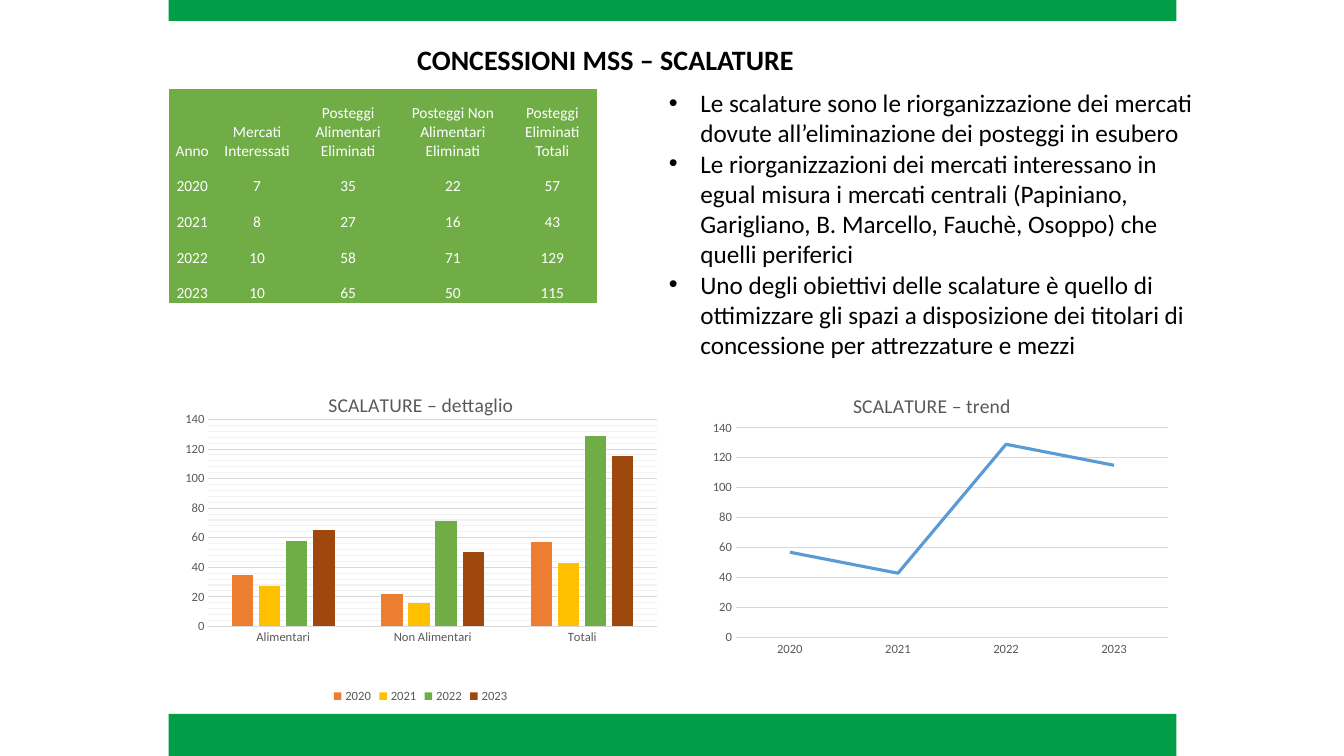
from dataclasses import dataclass

from lxml.etree import SubElement
from pptx import Presentation
from pptx.chart.data import CategoryChartData
from pptx.dml.color import RGBColor
from pptx.enum.chart import XL_CHART_TYPE, XL_LEGEND_POSITION, XL_TICK_MARK
from pptx.enum.shapes import MSO_SHAPE
from pptx.enum.text import MSO_ANCHOR, MSO_AUTO_SIZE, PP_ALIGN
from pptx.oxml import parse_xml
from pptx.oxml.ns import nsdecls, qn
from pptx.util import Cm, Pt


@dataclass(frozen=True)
class Theme:
    font: str = "Calibri"
    black: RGBColor = RGBColor.from_string("000000")
    white: RGBColor = RGBColor.from_string("FFFFFF")
    band: RGBColor = RGBColor.from_string("009E47")
    cell: RGBColor = RGBColor.from_string("70AD47")
    gray: RGBColor = RGBColor.from_string("595959")
    grid: RGBColor = RGBColor.from_string("D9D9D9")
    minor_grid: RGBColor = RGBColor.from_string("F2F2F2")
    years: tuple = ("ED7D31", "FFC000", "70AD47", "9E480E")
    trend: tuple = ("5B9BD5",)
    title: Pt = Pt(20)
    body: Pt = Pt(18)
    chart_title: Pt = Pt(14)
    table: Pt = Pt(11)
    label: Pt = Pt(9)


theme = Theme()


def write(tf, text, size, color, bold=False, align=PP_ALIGN.LEFT, spacing=None, bullet=None):
    for i, line in enumerate(text.split("\n")):
        p = tf.add_paragraph() if i else tf.paragraphs[0]
        p.alignment = align
        if spacing:
            p.line_spacing = spacing
        if bullet:
            pPr = p._p.get_or_add_pPr()
            pPr.set("marL", str(Cm(0.79)))
            pPr.set("indent", str(-Cm(0.79)))
            SubElement(pPr, qn("a:buFont")).set("typeface", "Arial")
            SubElement(pPr, qn("a:buChar")).set("char", bullet)
        r = p.add_run()
        r.text = line
        r.font.name = theme.font
        r.font.size = size
        r.font.bold = bold
        r.font.color.rgb = color


def place(parent, x, y, w=None, h=None):
    layout = parent.find(qn("c:layout"))
    if layout is not None:
        parent.remove(layout)
    target = '<c:layoutTarget val="inner"/>' if w else ""
    size = f'<c:w val="{w}"/><c:h val="{h}"/>' if w else ""
    layout = parse_xml(
        f'<c:layout {nsdecls("c")}><c:manualLayout>{target}'
        f'<c:xMode val="edge"/><c:yMode val="edge"/>'
        f'<c:x val="{x}"/><c:y val="{y}"/>{size}</c:manualLayout></c:layout>')
    tx = parent.find(qn("c:tx"))
    parent.insert(0 if tx is None else 1, layout)


prs = Presentation()
prs.slide_width, prs.slide_height = Cm(33.87), Cm(19.05)
s = prs.slides.add_slide(prs.slide_layouts[5])

left = Cm(4.25)
for top, height in ((0, 0.53), (17.99, 1.06)):
    sp = s.shapes.add_shape(MSO_SHAPE.RECTANGLE, left, Cm(top), Cm(25.4), Cm(height))
    sp.shadow.inherit = False
    sp.fill.solid()
    sp.fill.fore_color.rgb = theme.band
    sp.line.fill.background()

title = s.shapes.title
title.left, title.top, title.width, title.height = Cm(10.26), Cm(0.53), Cm(12.14), Cm(1.4)
tf = title.text_frame
tf.vertical_anchor = MSO_ANCHOR.TOP
tf.auto_size = MSO_AUTO_SIZE.SHAPE_TO_FIT_TEXT
write(tf, "CONCESSIONI MSS – SCALATURE", theme.title, theme.black, bold=True, spacing=1.5)

years = ["2020", "2021", "2022", "2023"]
markets = [7, 8, 10, 10]
food = [35, 27, 58, 65]
non_food = [22, 16, 71, 50]
totals = [57, 43, 129, 115]

header = ("Anno", "Mercati Interessati", "Posteggi Alimentari Eliminati",
          "Posteggi Non Alimentari Eliminati", "Posteggi Eliminati Totali")
rows = [header, *zip(years, markets, food, non_food, totals)]
col_widths = (1.19, 2.08, 2.51, 2.77, 2.24)
tbl = s.shapes.add_table(len(rows), len(header), left, Cm(2.24), Cm(10.79), Cm(5.4)).table
tbl.first_row = tbl.horz_banding = False
tbl._tbl.tblPr.find(qn("a:tableStyleId")).text = "{2D5ABB26-0587-4C30-8999-92F81FD0307C}"
for col, width in zip(tbl.columns, col_widths):
    col.width = Cm(width)
for i, values in enumerate(rows):
    tbl.rows[i].height = Cm(0.9 if i else 1.8)
    for j, value in enumerate(values):
        cell = tbl.cell(i, j)
        cell.fill.solid()
        cell.fill.fore_color.rgb = theme.cell
        cell.vertical_anchor = MSO_ANCHOR.BOTTOM
        cell.margin_left = cell.margin_right = cell.margin_top = Cm(0.02)
        cell.margin_bottom = 0
        write(cell.text_frame, str(value), theme.table, theme.white, align=PP_ALIGN.CENTER)

notes = """Le scalature sono le riorganizzazione dei mercati dovute all’eliminazione dei posteggi in esubero
Le riorganizzazioni dei mercati interessano in egual misura i mercati centrali (Papiniano, Garigliano, B. Marcello, Fauchè, Osoppo) che quelli periferici
Uno degli obiettivi delle scalature è quello di ottimizzare gli spazi a disposizione dei titolari di concessione per attrezzature e mezzi"""
tf = s.shapes.add_textbox(Cm(16.61), Cm(2.08), Cm(13.82), Cm(7.19)).text_frame
tf.word_wrap = True
tf.auto_size = MSO_AUTO_SIZE.SHAPE_TO_FIT_TEXT
write(tf, notes, theme.body, theme.black, bullet="•")

detail = CategoryChartData()
detail.categories = ["Alimentari", "Non Alimentari", "Totali"]
for year, *values in zip(years, food, non_food, totals):
    detail.add_series(year, values)
trend = CategoryChartData()
trend.categories = years
trend.add_series("Totali", totals)

charts = (
    (XL_CHART_TYPE.COLUMN_CLUSTERED, detail, (4.25, 9.35, 12.7, 8.48), "SCALATURE – dettaglio",
     (0.31, 0.05), (0.079, 0.144, 0.89, 0.615), theme.years),
    (XL_CHART_TYPE.LINE, trend, (17.37, 9.35, 12.24, 7.34), "SCALATURE – trend",
     (0.33, 0.06), (0.096, 0.195, 0.89, 0.721), theme.trend),
)
for kind, data, box, name, title_at, plot_at, colors in charts:
    chart = s.shapes.add_chart(kind, *map(Cm, box), data).chart
    is_column = kind == XL_CHART_TYPE.COLUMN_CLUSTERED
    chart.font.name = theme.font
    chart.font.size = theme.label
    chart.font.color.rgb = theme.gray
    chart.has_title = True
    write(chart.chart_title.text_frame, name, theme.chart_title, theme.gray, align=PP_ALIGN.CENTER)
    place(chart.chart_title._element, *title_at)
    place(chart._chartSpace.chart.plotArea, *plot_at)

    cat, val = chart.category_axis, chart.value_axis
    for axis in (cat, val):
        axis.major_tick_mark = axis.minor_tick_mark = XL_TICK_MARK.NONE
    cat.format.line.color.rgb = theme.grid
    cat.format.line.width = Pt(0.75)
    val.format.line.fill.background()
    val.minimum_scale, val.maximum_scale, val.major_unit = 0, 140, 20
    val.major_gridlines.format.line.color.rgb = theme.grid
    val.major_gridlines.format.line.width = Pt(0.75)

    plot = chart.plots[0]
    plot.vary_by_categories = False
    chart.has_legend = is_column
    if is_column:
        plot.gap_width, plot.overlap = 219, -27
        val.minor_unit = 4
        val.has_minor_gridlines = True
        val._element.find(qn("c:minorGridlines")).append(parse_xml(
            f'<c:spPr {nsdecls("c", "a")}><a:ln w="{Pt(0.75)}"><a:solidFill>'
            f'<a:srgbClr val="{theme.minor_grid}"/></a:solidFill></a:ln></c:spPr>'))
        chart.legend.position = XL_LEGEND_POSITION.BOTTOM
        chart.legend.include_in_layout = False
    for series, color in zip(plot.series, colors):
        rgb = RGBColor.from_string(color)
        if is_column:
            series.invert_if_negative = False
            series.format.fill.solid()
            series.format.fill.fore_color.rgb = rgb
        else:
            series.smooth = False
            series.format.line.color.rgb = rgb
            series.format.line.width = Pt(2.25)

prs.save("out.pptx")
